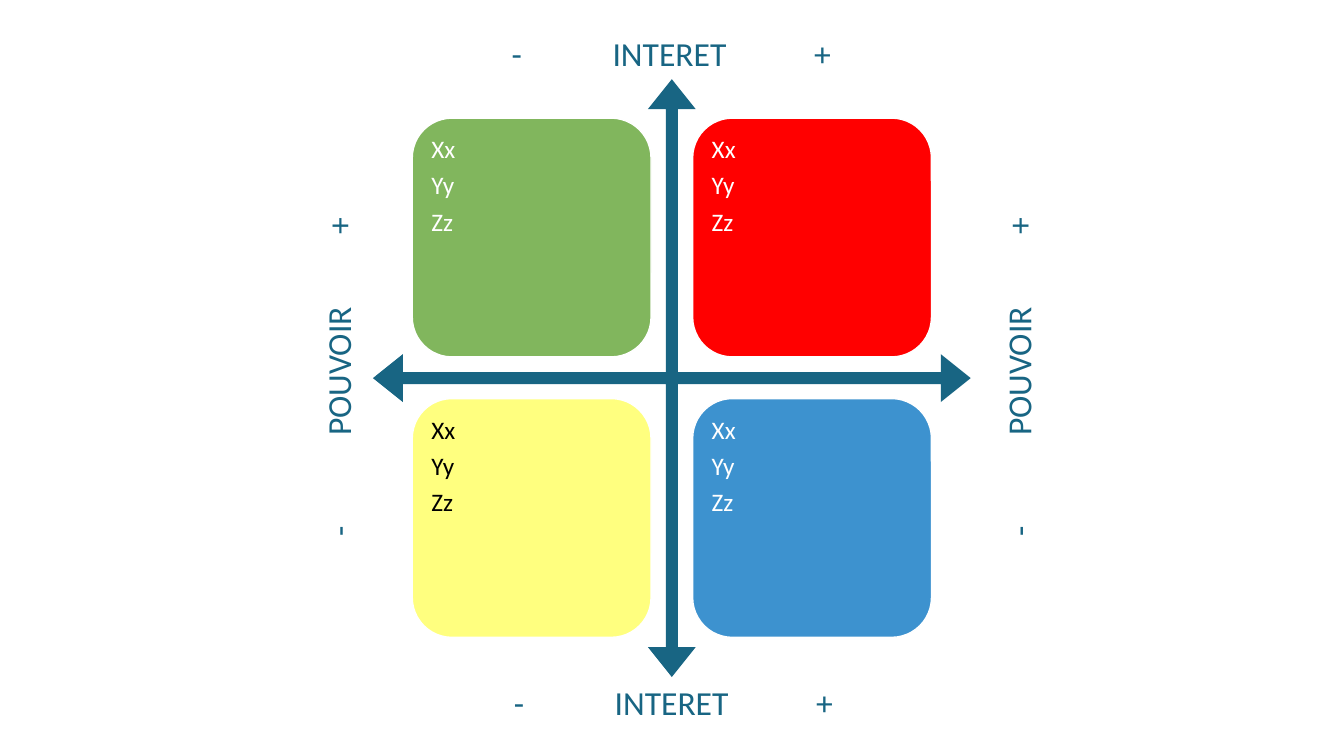
from pptx import Presentation
from pptx.dml.color import RGBColor
from pptx.enum.shapes import MSO_SHAPE
from pptx.enum.text import MSO_AUTO_SIZE, PP_ALIGN
from pptx.oxml.ns import qn
from pptx.util import Pt
from lxml.etree import SubElement

# Content
FONT = "Calibri"
TEAL = "186583"
LINES = ["Xx", "Yy", "Zz"]
# row, column, fill, opacity in percent, text colour
CARDS = [
    (0, 0, "70AD47", 88, "FFFFFF"),
    (0, 1, "FF0000", 100, "FFFFFF"),
    (1, 0, "FFFF00", 50, "000000"),
    (1, 1, "0070C0", 76, "FFFFFF"),
]
# text, left, top, width, turn
LABELS = [
    ("-\tINTERET\t+", 294.5, 483.4, 373, 0),
    ("-\tPOUVOIR\t+", 56.9, 251.3, 368.6, 270),
    ("-\tINTERET\t+", 293, 20.2, 373, 0),
    ("-\tPOUVOIR\t+", 542.9, 251.3, 368.6, 270),
]

# Layout, in points
CROSS = (266.4, 56.6, 427, 427)
LEFT, TOP = 294.5, 84.4
SIDE, STEP = 170.6, 200.3
PAD, INSET = 8.6, 5
TAB = 72

deck = Presentation()
deck.slide_width, deck.slide_height = Pt(960), Pt(540)
slide = deck.slides.add_slide(deck.slide_layouts[6])


def color(code):
    return RGBColor.from_string(code)


def paint(kind, box, fill, alpha=100):
    shape = slide.shapes.add_shape(kind, *map(Pt, box))
    shape.shadow.inherit = False
    shape.fill.solid()
    shape.fill.fore_color.rgb = color(fill)
    if alpha < 100:
        tint = shape.fill._xPr.find(qn("a:solidFill"))[0]
        SubElement(tint, qn("a:alpha"), val=str(alpha * 1000))
    shape.line.fill.background()
    return shape


def write(box, lines, size, ink):
    area = slide.shapes.add_textbox(*map(Pt, box))
    frame = area.text_frame
    frame.word_wrap = True
    for i, line in enumerate(lines):
        para = frame.add_paragraph() if i else frame.paragraphs[0]
        run = para.add_run()
        run.text = line
        run.font.name = FONT
        run.font.size = Pt(size)
        run.font.color.rgb = color(ink)
    return area


# Crossed arrows
cross = paint(MSO_SHAPE.QUAD_ARROW, CROSS, TEAL)
for i, ratio in enumerate((0.02, 0.04, 0.05)):
    cross.adjustments[i] = ratio

# Quadrant cards
for row, col, fill, alpha, ink in CARDS:
    x, y = LEFT + col * STEP, TOP + row * STEP
    card = paint(MSO_SHAPE.ROUNDED_RECTANGLE, (x, y, SIDE, SIDE), fill, alpha)
    card.line.color.rgb = color("FFFFFF")
    card.line.width = Pt(1)
    inner = SIDE - 2 * PAD
    frame = write((x + PAD, y + PAD, inner, inner), LINES, 18, ink).text_frame
    frame.margin_left = frame.margin_right = Pt(INSET)
    frame.margin_top = frame.margin_bottom = Pt(INSET)
    for para in frame.paragraphs:
        para.line_spacing = 0.9
        para.space_after = Pt(6.3)

# Axis labels, with signs set apart by tabs
for text, x, y, width, turn in LABELS:
    label = write((x, y, width, 36), [text], 24, TEAL)
    label.rotation = turn
    label.text_frame.auto_size = MSO_AUTO_SIZE.SHAPE_TO_FIT_TEXT
    para = label.text_frame.paragraphs[0]
    para.alignment = PP_ALIGN.CENTER
    para._p.get_or_add_pPr().set("defTabSz", str(Pt(TAB)))

deck.save("out.pptx")
